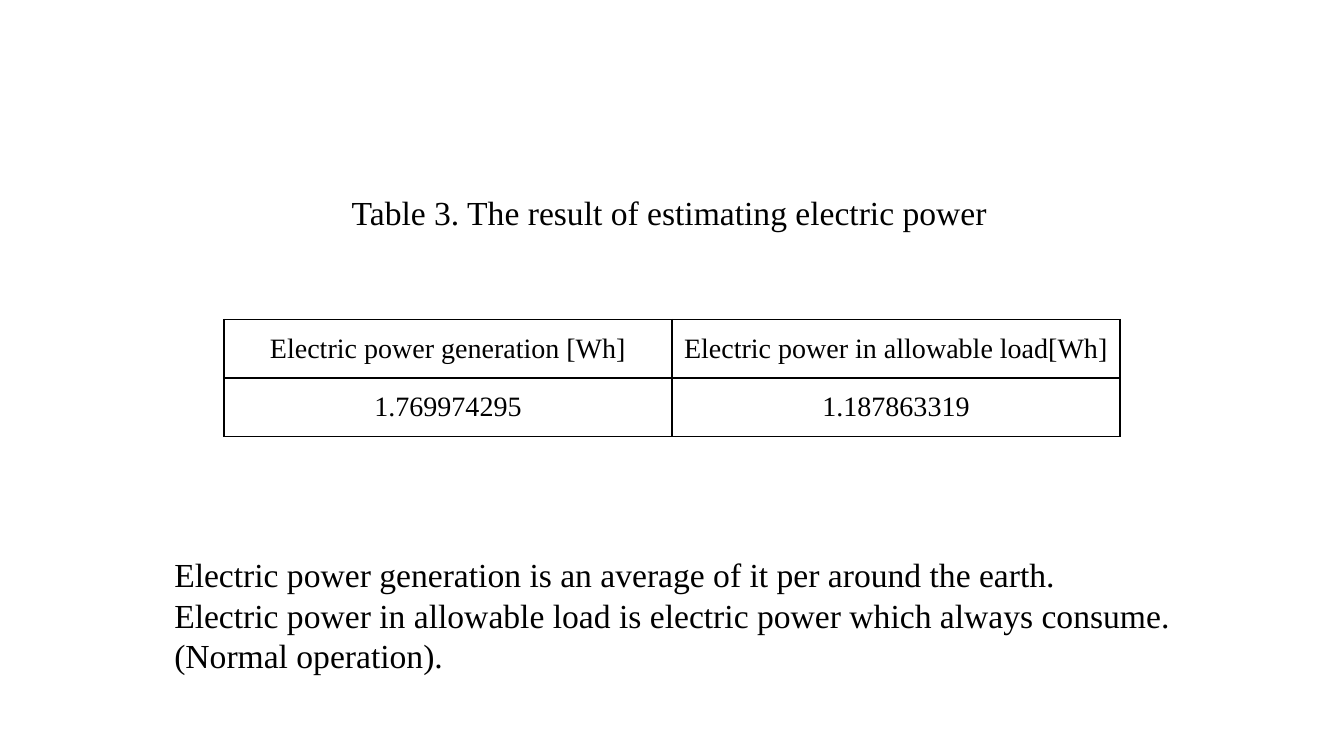
from lxml import etree
from pptx import Presentation
from pptx.dml.color import RGBColor
from pptx.enum.text import MSO_ANCHOR, PP_ALIGN
from pptx.oxml.ns import qn
from pptx.util import Inches, Pt

CENTER, MIDDLE = PP_ALIGN.CENTER, MSO_ANCHOR.MIDDLE

# Content
CAPTION = ["Table 3. The result of estimating electric power"]
NOTES = [
    "Electric power generation is an average of it per around the earth.",
    "Electric power in allowable load is electric power which always consume.",
    "(Normal operation).",
]
ROWS = [
    ("Electric power generation [Wh]", "Electric power in allowable load[Wh]"),
    ("1.769974295", "1.187863319"),
]

# Format and layout, in inches
COLORS = {"text": "000000", "border": "000000"}
FONT = {"name": "Times New Roman"}
BODY_SIZE, CELL_SIZE, BORDER = Pt(24), Pt(20), Pt(1)
SLIDE_W, SLIDE_H = 13.33, 7.5
COL_W, ROW_H = SLIDE_W / 3, 0.58
TABLE_LEFT, TABLE_TOP = SLIDE_W / 6, 3.17
TEXTS = [
    (CAPTION, (3.39, 1.85, 6.56, 0.5), False),
    (NOTES, (1.63, 5.45, 10.08, 1.31), True),
]


def write(p, text, size):
    r = p.add_run()
    r.text = text
    for key, value in {**FONT, "size": size}.items():
        setattr(r.font, key, value)
    r.font.color.rgb = RGBColor.from_string(COLORS["text"])


def add_text(s, lines, box, wrap):
    tf = s.shapes.add_textbox(*map(Inches, box)).text_frame
    tf.word_wrap = wrap
    for i, line in enumerate(lines):
        p = tf.paragraphs[0] if i == 0 else tf.add_paragraph()
        write(p, line, BODY_SIZE)


def add_borders(cell):
    tc_pr = cell._tc.get_or_add_tcPr()
    for i, side in enumerate(("lnL", "lnR", "lnT", "lnB")):
        ln = etree.Element(qn(f"a:{side}"), w=str(BORDER))
        fill = etree.SubElement(ln, qn("a:solidFill"))
        etree.SubElement(fill, qn("a:srgbClr"), val=COLORS["border"])
        tc_pr.insert(i, ln)


def add_results(s):
    n_rows, n_cols = len(ROWS), len(ROWS[0])
    box = (TABLE_LEFT, TABLE_TOP, n_cols * COL_W, n_rows * ROW_H)
    table = s.shapes.add_table(n_rows, n_cols, *map(Inches, box)).table
    table.first_row = table.horz_banding = False
    for i, row in enumerate(ROWS):
        for j, text in enumerate(row):
            cell = table.cell(i, j)
            cell.fill.background()
            cell.vertical_anchor = MIDDLE
            p = cell.text_frame.paragraphs[0]
            p.alignment = CENTER
            write(p, text, CELL_SIZE)
            add_borders(cell)


def main():
    prs = Presentation()
    prs.slide_width, prs.slide_height = Inches(SLIDE_W), Inches(SLIDE_H)
    s = prs.slides.add_slide(prs.slide_layouts[6])
    # Caption and notes
    for lines, box, wrap in TEXTS:
        add_text(s, lines, box, wrap)
    # Results table
    add_results(s)
    prs.save("out.pptx")


if __name__ == "__main__":
    main()
